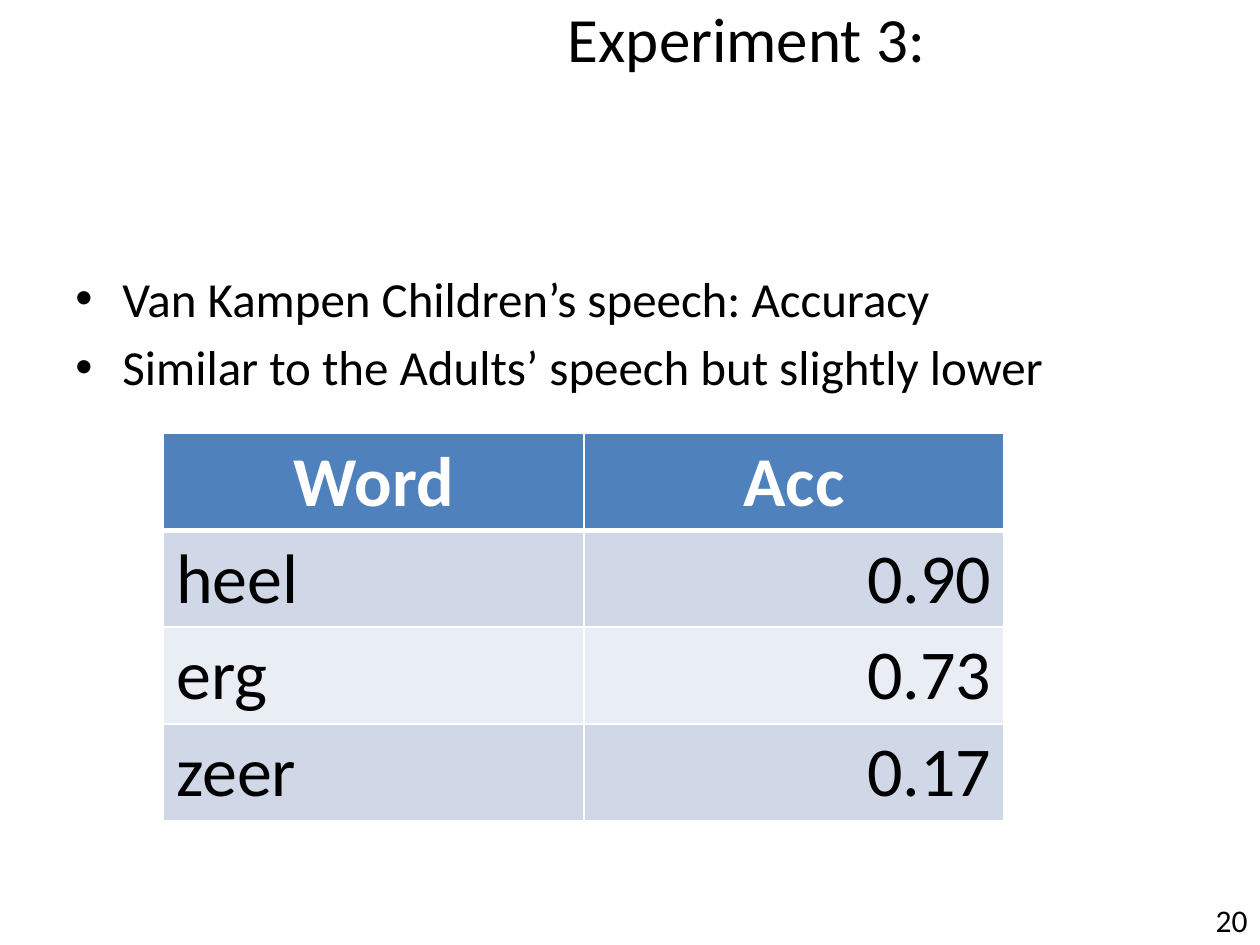
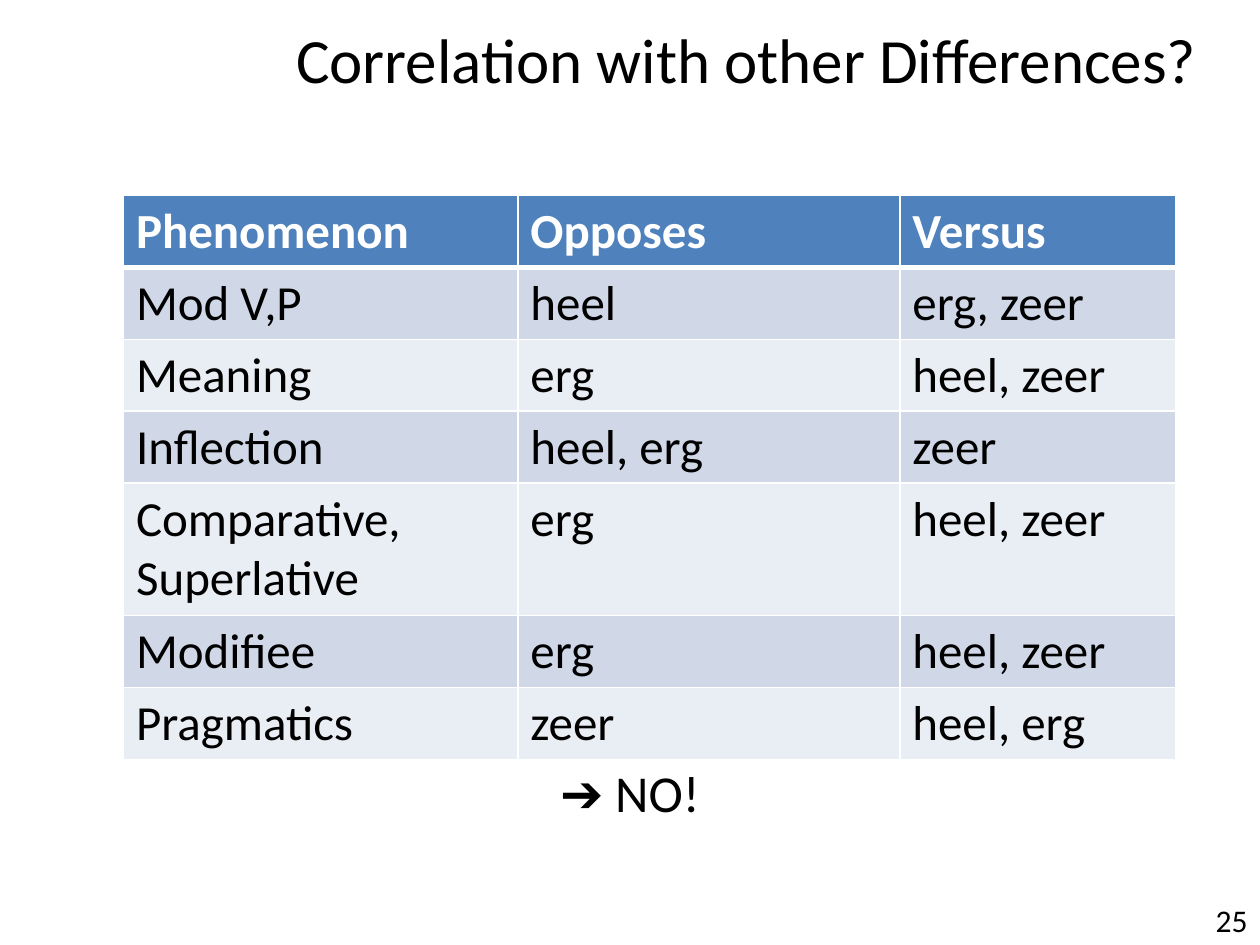
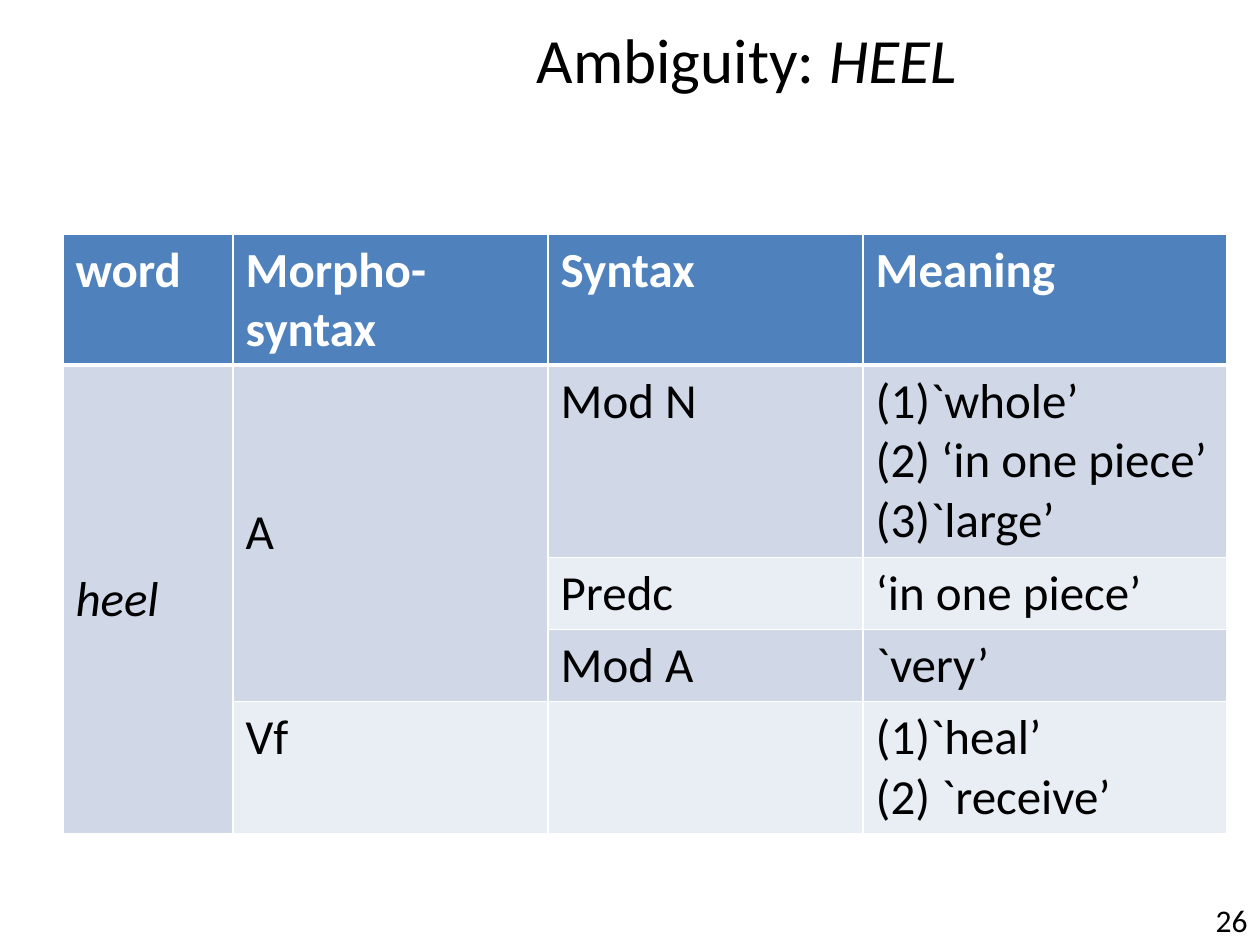
from lxml import etree
from pptx import Presentation
from pptx import util as u
from pptx.dml import color as dml
from pptx.enum import text as t
from pptx.oxml import ns

BLACK, WHITE, BLUE = "000000", "FFFFFF", "4F81BD"
BANDS = ("D0D8E8", "E9EDF4")
BODY = (1.27, 5.28, 22.86, 11.73)
LEFT, CENTER, RIGHT = t.PP_ALIGN.LEFT, t.PP_ALIGN.CENTER, t.PP_ALIGN.RIGHT


def rgb(value):
    """Turn a hex string into a colour."""
    return dml.RGBColor.from_string(value)


def write(p, text, size=28, color=BLACK, bold=False, italic=False, align=LEFT):
    """Add a formatted run to a paragraph."""
    p.alignment = align
    r = p.add_run()
    r.text = text
    r.font.name, r.font.size = "Calibri", u.Pt(size)
    r.font.bold, r.font.italic = bold, italic
    r.font.color.rgb = rgb(color)


def mark(p, indent, tag, **attrs):
    """Give a paragraph a hanging bullet or number."""
    pPr = p._p.get_or_add_pPr()
    pPr.set("marL", str(u.Cm(indent)))
    pPr.set("indent", str(-u.Cm(indent)))
    if tag == "buChar":
        etree.SubElement(pPr, ns.qn("a:buFont"), typeface="Arial")
    etree.SubElement(pPr, ns.qn("a:" + tag), **attrs)


def border(cell, side, width):
    """Draw one white cell border."""
    ln = etree.SubElement(cell._tc.get_or_add_tcPr(), ns.qn("a:ln" + side), w=str(u.Pt(width)))
    fill = etree.SubElement(ln, ns.qn("a:solidFill"))
    etree.SubElement(fill, ns.qn("a:srgbClr"), val=WHITE)


def paragraphs(tf, count):
    """Yield a number of paragraphs of a text frame, starting with its first."""
    for i in range(count):
        yield tf.add_paragraph() if i else tf.paragraphs[0]


class Deck:
    """Hold the presentation style and the current slide."""

    def __init__(self):
        """Open an empty 4:3 presentation."""
        self.prs = Presentation()
        self.prs.slide_width, self.prs.slide_height = u.Cm(25.4), u.Cm(19.05)

    def box(self, x, y, w, h, anchor=t.MSO_ANCHOR.TOP):
        """Add a wrapping text box and return its text frame."""
        tf = self.s.shapes.add_textbox(*map(u.Cm, (x, y, w, h))).text_frame
        tf.word_wrap, tf.vertical_anchor = True, anchor
        return tf

    def slide(self, number):
        """Start a slide with its page number."""
        self.s = self.prs.slides.add_slide(self.prs.slide_layouts[6])
        tf = self.box(22.7, 18.03, 2.7, 1.02)
        write(tf.paragraphs[0], str(number), size=18, align=RIGHT)

    def title(self, text, italic="", anchor=t.MSO_ANCHOR.MIDDLE):
        """Add the title, with an optional italic ending."""
        tf = self.box(4.7, 0, 20.7, 2.34, anchor)
        if anchor == t.MSO_ANCHOR.TOP:
            tf.margin_top = 0
        p = tf.paragraphs[0]
        write(p, text, size=36, align=CENTER)
        if italic:
            write(p, italic, size=36, italic=True, align=CENTER)

    def bullets(self, lines):
        """Add the bulleted body text."""
        tf = self.box(*BODY)
        for i, p in enumerate(paragraphs(tf, len(lines))):
            if i:
                p.space_before = u.Pt(5.6)
            mark(p, 0.95, "buChar", char="•")
            write(p, lines[i])

    def conclusion(self, text):
        """Add a centred line at the foot of the body area."""
        tf = self.box(*BODY, t.MSO_ANCHOR.BOTTOM)
        tf.margin_bottom = u.Cm(0.43)
        write(tf.paragraphs[0], text, size=29.6, align=CENTER)

    def table(self, x, y, widths, heights, rows, size=28, head=LEFT, aligns=None, italics=(), spans=()):
        """Add a banded table; a list in a cell becomes numbered lines."""
        frame = self.s.shapes.add_table(len(rows), len(widths), u.Cm(x), u.Cm(y),
                                        u.Cm(sum(widths)), u.Cm(sum(heights)))
        tbl = frame.table
        tbl.horz_banding = False
        for col, width in zip(tbl.columns, widths):
            col.width = u.Cm(width)
        for i, (row, height) in enumerate(zip(rows, heights)):
            tbl.rows[i].height = u.Cm(height)
            for j, content in enumerate(row):
                cell = tbl.cell(i, j)
                for side in "LRTB":
                    border(cell, side, 3 if (i, side) in ((0, "B"), (1, "T")) else 1)
                cell.fill.solid()
                cell.fill.fore_color.rgb = rgb(BANDS[(i - 1) % 2] if i else BLUE)
                align = (aligns[j] if aligns else LEFT) if i else head
                numbered = isinstance(content, list)
                lines = content if numbered else content.split("\n")
                for p, line in zip(paragraphs(cell.text_frame, len(lines)), lines):
                    if numbered:
                        mark(p, 0.64, "buAutoNum", type="arabicParenBoth")
                    if line:
                        write(p, line, size=size, color=BLACK if i else WHITE,
                              bold=not i, italic=(i, j) in italics, align=align)
        for top, bottom, col in spans:
            cell = tbl.cell(top, col)
            cell.merge(tbl.cell(bottom, col))
            cell.vertical_anchor = t.MSO_ANCHOR.MIDDLE


def main():
    """Build the three slides."""
    deck = Deck()

    deck.slide(20)
    deck.bullets(["Van Kampen Children’s speech: Accuracy",
                  "Similar to the Adults’ speech but slightly lower"])
    deck.title("Experiment 3:", anchor=t.MSO_ANCHOR.TOP)
    deck.table(3.3, 8.74, [8.47] * 2, [1.95] * 4,
               [("Word", "Acc"), ("heel", "0.90"), ("erg", "0.73"), ("zeer", "0.17")],
               size=40, head=CENTER, aligns=(LEFT, RIGHT))

    deck.slide(25)
    deck.conclusion("➔ NO!")
    deck.title("Correlation with other Differences?")
    deck.table(2.49, 3.94, [7.95, 7.7, 5.56], [1.45] * 4 + [2.67] + [1.45] * 2,
               [("Phenomenon", "Opposes", "Versus"),
                ("Mod V,P", "heel", "erg, zeer"),
                ("Meaning", "erg", "heel, zeer"),
                ("Inflection", "heel, erg", "zeer"),
                ("Comparative, Superlative", "erg", "heel, zeer"),
                ("Modifiee", "erg", "heel, zeer"),
                ("Pragmatics", "zeer", "heel, erg")])

    deck.slide(26)
    deck.title("Ambiguity: ", italic="HEEL")
    deck.table(1.27, 4.72, [3.43, 6.35, 6.35, 7.32], [2.64, 3.88, 1.45, 1.45, 2.67],
               [("word", "Morpho-\nsyntax", "Syntax", "Meaning"),
                ("heel", "A", "Mod N", ["`whole’", " ‘in one piece’", "`large’"]),
                ("", "", "Predc", "‘in one piece’"),
                ("", "", "Mod A", "`very’"),
                ("", "Vf", "", ["`heal’", " `receive’"])],
               italics=[(1, 0)], spans=[(1, 4, 0), (1, 3, 1)])

    deck.prs.save("out.pptx")


if __name__ == "__main__":
    main()
